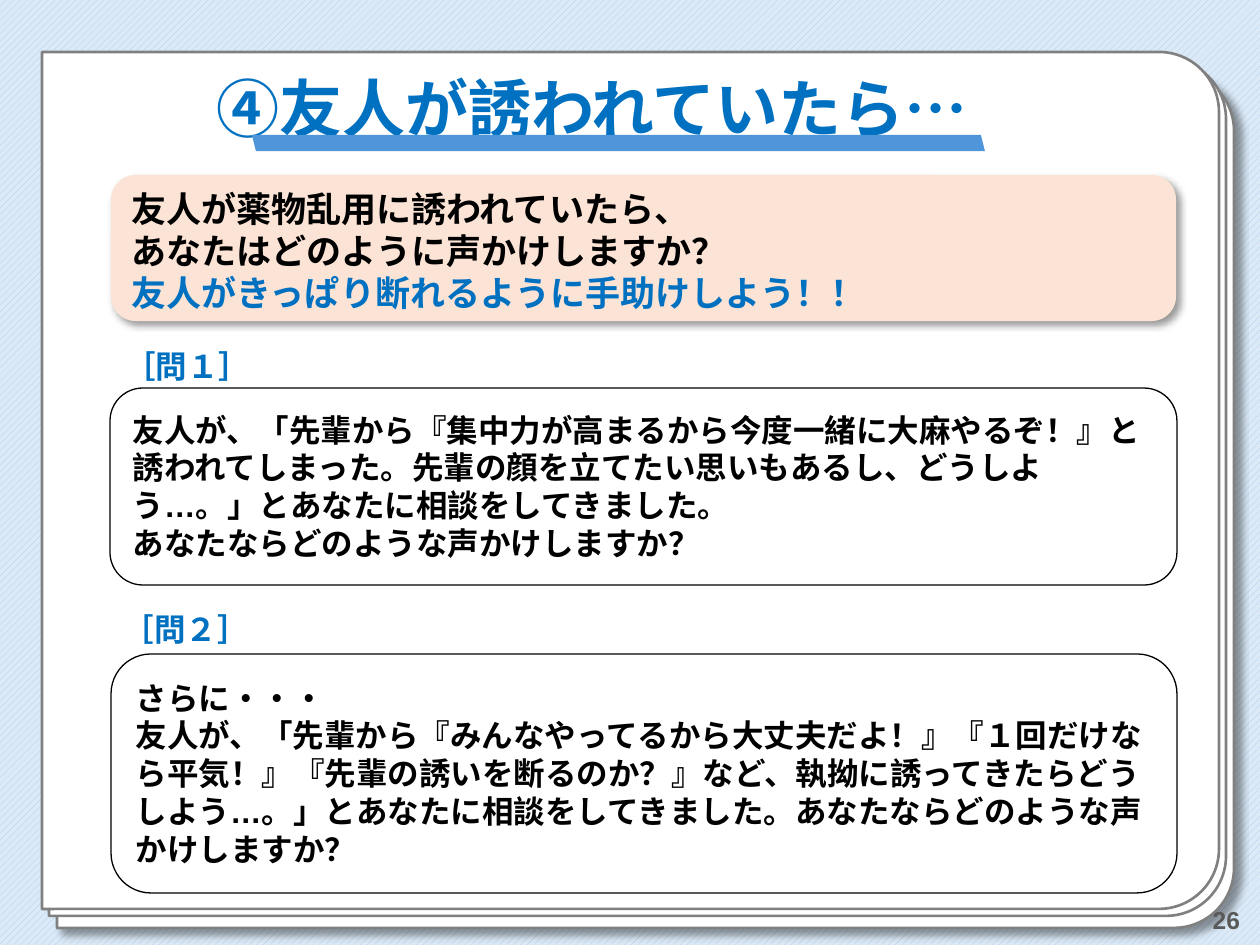
from lxml import etree
from pptx import Presentation
from pptx.dml.color import RGBColor
from pptx.enum.dml import MSO_PATTERN
from pptx.enum.shapes import MSO_SHAPE
from pptx.enum.text import MSO_ANCHOR, MSO_AUTO_SIZE, PP_ALIGN
from pptx.oxml.ns import qn
from pptx.util import Pt

PX = 914400 / 126
SHEET = MSO_SHAPE.ROUND_2_SAME_RECTANGLE
ROUND = MSO_SHAPE.ROUNDED_RECTANGLE
SLANT = MSO_SHAPE.PARALLELOGRAM
LEFT, CENTER, RIGHT = PP_ALIGN.LEFT, PP_ALIGN.CENTER, PP_ALIGN.RIGHT
TOP, MIDDLE = MSO_ANCHOR.TOP, MSO_ANCHOR.MIDDLE
GROW, FIXED = MSO_AUTO_SIZE.SHAPE_TO_FIT_TEXT, MSO_AUTO_SIZE.NONE
ARIAL, NOTO = "Arial", "Noto Sans CJK JP"
BLUE, BLACK, GREY = "0070C0", "000000", "595959"

prs = Presentation()
prs.slide_width, prs.slide_height = round(1260 * PX), round(945 * PX)
s = prs.slides.add_slide(prs.slide_layouts[6])


def rgb(value):
    return RGBColor.from_string(value)


def add_box(kind, at, fill=None, line=None, width=0.75, shadow=0):
    box = [round(v * PX) for v in at]
    if kind is None:
        return s.shapes.add_textbox(*box)
    sp = s.shapes.add_shape(kind, *box)
    sp.shadow.inherit = False
    if fill:
        sp.fill.solid()
        sp.fill.fore_color.rgb = rgb(fill)
    else:
        sp.fill.background()
    if line:
        sp.line.color.rgb = rgb(line)
        sp.line.width = Pt(width)
    else:
        sp.line.fill.background()
    if shadow:
        effects = sp.element.spPr.find(qn("a:effectLst"))
        outer = etree.SubElement(effects, qn("a:outerShdw"), blurRad=str(Pt(4)),
                                 dist=str(Pt(shadow)), dir="2700000", algn="tl", rotWithShape="0")
        color = etree.SubElement(outer, qn("a:srgbClr"), val=BLACK)
        etree.SubElement(color, qn("a:alpha"), val="40000")
    return sp


bg = s.background.fill
bg.patterned()
bg.pattern = MSO_PATTERN.WIDE_UPWARD_DIAGONAL
bg.fore_color.rgb = rgb("A6CAEC")
bg.back_color.rgb = rgb("DCEAF7")

for x, y, shadow in [(217, -89, 5), (209, -101, 0), (202, -108, 0)]:
    sp = add_box(SHEET, (x, y, 857, 1177), "FFFFFF", "808080", 1.5, shadow)
    sp.adjustments[0] = 0.07
    sp.adjustments[1] = 0
    sp.rotation = 90

number = add_box(None, (969, 895, 284, 50))
title = add_box(None, (86, 44, 1089, 136))
intro = add_box(ROUND, (111, 175, 1065, 146), "FBE3D6", shadow=3)
label1 = add_box(None, (111, 334, 1065, 63))
question1 = add_box(ROUND, (110, 388, 1067, 197), "FFFFFF", BLACK)
underline = add_box(SLANT, (252, 135, 733, 16), "4E95D9")
underline.element.spPr.xfrm.set("flipH", "1")
label2 = add_box(None, (110, 597, 1065, 63))
question2 = add_box(ROUND, (111, 654, 1066, 239), None, BLACK)

plain, padded = (13, 6, 13, 6), (13, 13, 13, 13)
texts = [
    (number, plain, MIDDLE, FIXED, RIGHT, 14, [[("26", ARIAL, GREY)]]),
    (title, plain, MIDDLE, FIXED, CENTER, 36,
     [[("④友人が誘われていたら", ARIAL, BLUE), ("… 　", NOTO, BLUE)]]),
    (intro, (13, 5, 13, 0), TOP, GROW, LEFT, 20,
     [[("友人が薬物乱用に誘われていたら、\nあなたはどのように声かけしますか？", NOTO, BLACK)],
      [("友人がきっぱり断れるように手助けしよう！！", ARIAL, BLUE)]]),
    (label1, padded, TOP, GROW, LEFT, 18, [[("［問１］", ARIAL, BLUE)]]),
    (question1, padded, TOP, GROW, LEFT, 18,
     [[("友人が、「先輩から『集中力が高まるから今度一緒に大麻やるぞ！』と誘われてしまった。"
        "先輩の顔を立てたい思いもあるし、どうしよう…。」とあなたに相談をしてきました。\n"
        "あなたならどのような声かけしますか？", ARIAL, BLACK)]]),
    (label2, padded, TOP, GROW, LEFT, 18, [[("［問２］", ARIAL, BLUE)]]),
    (question2, padded, TOP, GROW, LEFT, 18,
     [[("さらに・・・", ARIAL, BLACK)],
      [("友人が、「先輩から『みんなやってるから大丈夫だよ！』『１回だけなら平気！』"
        "『先輩の誘いを断るのか？』など、執拗に誘ってきたらどうしよう…。」"
        "とあなたに相談をしてきました。あなたならどのような声かけしますか？", ARIAL, BLACK)]]),
]

for sp, insets, anchor, fit, align, size, paragraphs in texts:
    tf = sp.text_frame
    tf.word_wrap = True
    tf.auto_size = fit
    tf.vertical_anchor = anchor
    tf.margin_left, tf.margin_top, tf.margin_right, tf.margin_bottom = [round(v * PX) for v in insets]
    for i, runs in enumerate(paragraphs):
        p = tf.add_paragraph() if i else tf.paragraphs[0]
        p.alignment = align
        if sp is title:
            p.line_spacing = 0.9
        for text, font, color in runs:
            for j, part in enumerate(text.split("\n")):
                if j:
                    p.add_line_break()
                r = p.add_run()
                r.text = part
                r.font.size = Pt(size)
                r.font.bold = True
                r.font.name = font
                r.font.color.rgb = rgb(color)
                etree.SubElement(r.font._element if hasattr(r.font, "_element") else r._r.get_or_add_rPr(),
                                 qn("a:ea"), typeface=font)

prs.save("out.pptx")
